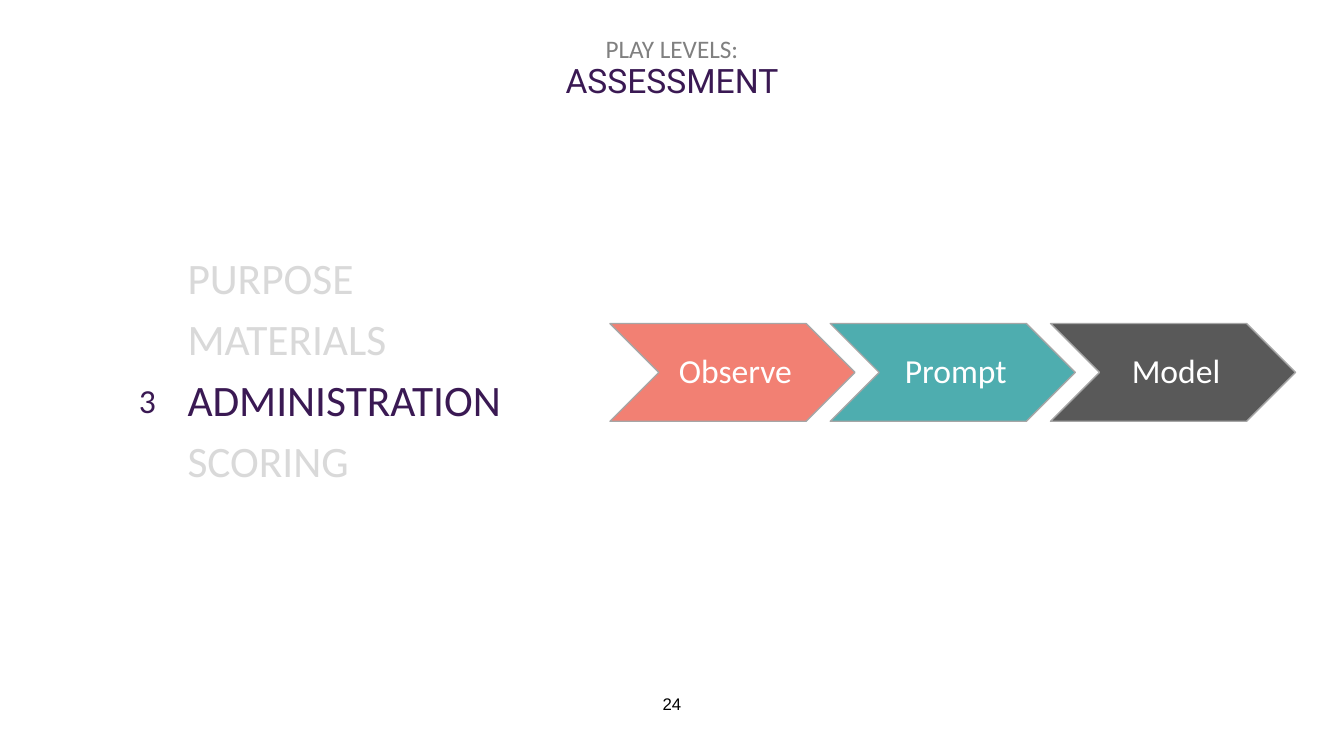
from dataclasses import dataclass

from pptx import Presentation
from pptx.dml.color import RGBColor
from pptx.enum.shapes import MSO_SHAPE
from pptx.enum.text import MSO_ANCHOR, MSO_AUTO_SIZE, PP_ALIGN
from pptx.oxml.xmlchemy import OxmlElement
from pptx.util import Inches, Pt

COLORS = {
    "purple": "3A1953",
    "gray": "808080",
    "faded": "D9D9D9",
    "coral": "F28073",
    "teal": "4EADAF",
    "charcoal": "595959",
    "outline": "A6A6A6",
    "white": "FFFFFF",
    "black": "000000",
}


@dataclass
class Step:
    label: str
    fill: str


@dataclass
class Topic:
    label: str
    color: str


STEPS = [Step("Observe", "coral"), Step("Prompt", "teal"), Step("Model", "charcoal")]
TOPICS = [
    Topic("PURPOSE", "faded"),
    Topic("MATERIALS", "faded"),
    Topic("ADMINISTRATION", "purple"),
    Topic("SCORING", "faded"),
]
STEP_LEFT, STEP_TOP, STEP_WIDTH, STEP_HEIGHT, STEP_PITCH = 6.05, 3.21, 2.43, 0.97, 2.185


def rgb(name: str) -> RGBColor:
    return RGBColor.from_string(COLORS[name])


def place(sp, left: float, top: float, width: float, height: float) -> None:
    sp.left, sp.top = Inches(left), Inches(top)
    sp.width, sp.height = Inches(width), Inches(height)


def add_run(p, text: str, size: float, color: str, font: str = "Calibri") -> None:
    r = p.add_run()
    r.text = text
    r.font.size = Pt(size)
    r.font.name = font
    r.font.color.rgb = rgb(color)


def add_title(s) -> None:
    sp = s.shapes.title
    place(sp, 0, 0.01, 13.33, 1.34)
    tf = sp.text_frame
    tf.auto_size = MSO_AUTO_SIZE.NONE
    tf.vertical_anchor = MSO_ANCHOR.MIDDLE
    p = tf.paragraphs[0]
    p.alignment = PP_ALIGN.CENTER
    p.line_spacing = 0.9
    add_run(p, "PLAY LEVELS:", 18, "gray")
    p.add_line_break()
    add_run(p, "ASSESSMENT", 24, "purple", "Roboto")


def add_topics(s, topics: list[Topic]) -> None:
    sp = s.placeholders[1]
    place(sp, 1.38, 2.5, 4.57, 3.98)
    tf = sp.text_frame
    tf.auto_size = MSO_AUTO_SIZE.NONE
    tf.margin_left = Inches(0.48)
    for i, topic in enumerate(topics):
        p = tf.add_paragraph() if i else tf.paragraphs[0]
        p.line_spacing = 0.9
        p.space_before = Pt(10)
        pPr = p._p.get_or_add_pPr()
        pPr.set("marL", "0")
        pPr.set("indent", "0")
        pPr.append(OxmlElement("a:buNone"))
        add_run(p, topic.label, 31, topic.color)


def add_step(s, step: Step, left: float) -> None:
    sp = s.shapes.add_shape(
        MSO_SHAPE.CHEVRON,
        Inches(left), Inches(STEP_TOP), Inches(STEP_WIDTH), Inches(STEP_HEIGHT),
    )
    sp.shadow.inherit = False
    sp.fill.solid()
    sp.fill.fore_color.rgb = rgb(step.fill)
    sp.line.color.rgb = rgb("outline")
    sp.line.width = Pt(1)
    tf = sp.text_frame
    tf.margin_left = Inches(0.1)
    tf.margin_right = tf.margin_top = tf.margin_bottom = Inches(0.04)
    tf.vertical_anchor = MSO_ANCHOR.MIDDLE
    p = tf.paragraphs[0]
    p.alignment = PP_ALIGN.CENTER
    p.line_spacing = 0.9
    add_run(p, step.label, 24, "white")


def add_label(s, text: str, left: float, top: float, width: float, height: float,
              size: float, color: str, font: str, align: PP_ALIGN) -> None:
    sp = s.shapes.add_textbox(Inches(left), Inches(top), Inches(width), Inches(height))
    tf = sp.text_frame
    tf.word_wrap = True
    tf.vertical_anchor = MSO_ANCHOR.MIDDLE
    p = tf.paragraphs[0]
    p.alignment = align
    add_run(p, text, size, color, font)


def main() -> None:
    prs = Presentation()
    prs.slide_width, prs.slide_height = Inches(13.33), Inches(7.5)
    s = prs.slides.add_slide(prs.slide_layouts[1])
    add_title(s)
    add_topics(s, TOPICS)
    for i, step in enumerate(STEPS):
        add_step(s, step, STEP_LEFT + i * STEP_PITCH)
    add_label(s, "3", 1.28, 3.72, 0.52, 0.5, 24, "purple", "Calibri", PP_ALIGN.LEFT)
    add_label(s, "24", 0, 6.63, 13.33, 0.7, 12, "black", "Arial", PP_ALIGN.CENTER)
    prs.save("out.pptx")


if __name__ == "__main__":
    main()
